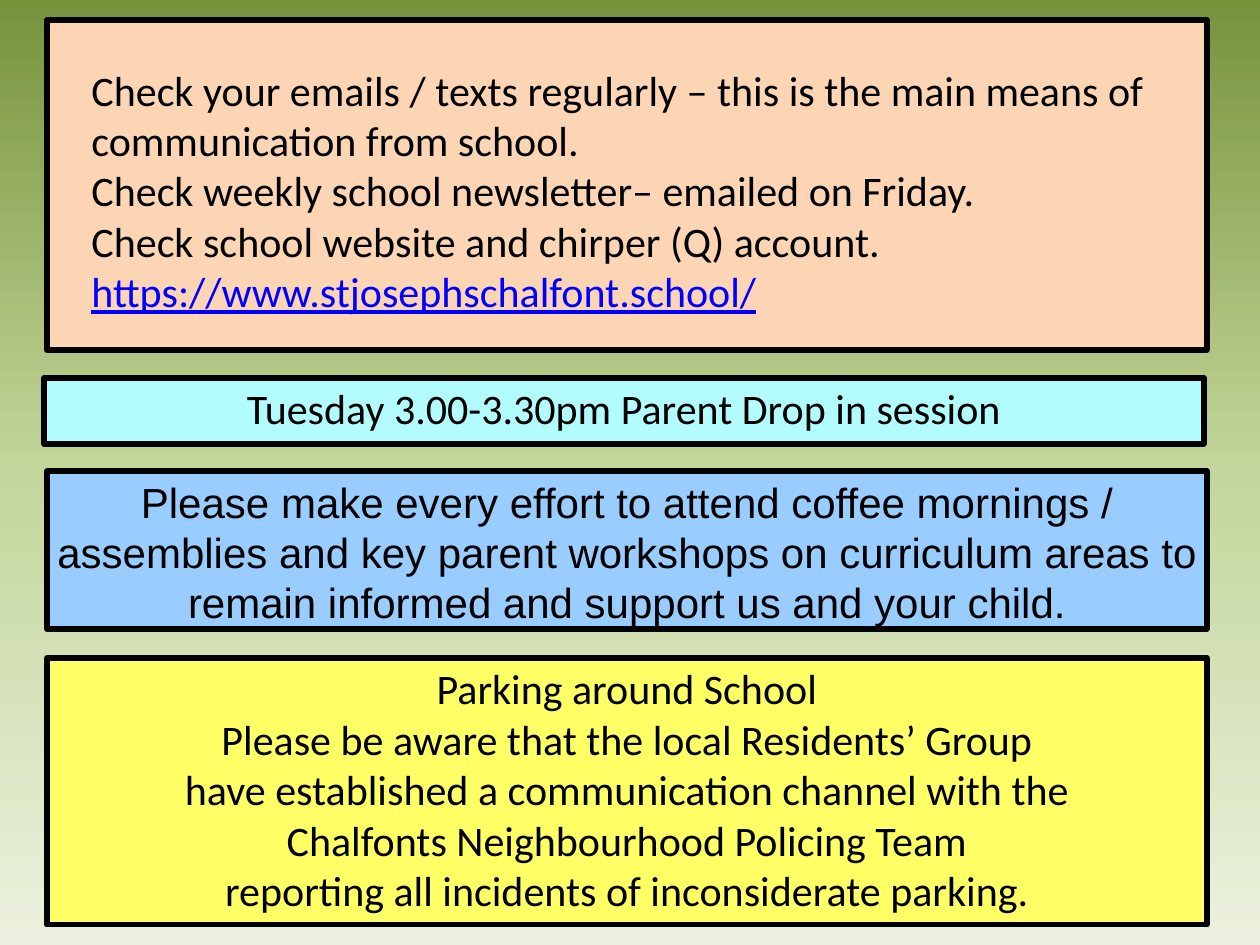
from copy import deepcopy
from dataclasses import dataclass

from pptx import Presentation
from pptx.dml.color import RGBColor
from pptx.enum.shapes import MSO_SHAPE as Preset
from pptx.enum.text import MSO_ANCHOR as Anchor, PP_ALIGN as Align
from pptx.oxml.ns import qn
from pptx.util import Emu, Pt

PX_PER_INCH = 126
BLACK = "000000"
LINK_BLUE = "0000FF"
BACKGROUND_STOPS = [(0, "77933C"), (0.5, "C3D69B"), (1, "EBF1DE")]
BOX_WIDTH = 1160
BOX_INSET = 5


@dataclass(frozen=True)
class NoticeBox:
    left: int
    top: int
    height: int
    fill: str
    lines: tuple[str, ...] = ()
    font: str = "Calibri"


NOTICE_BOXES = [
    NoticeBox(47, 658, 267, "FFFF66", (
        "Parking around School",
        "Please be aware that the local Residents’ Group",
        "have established a communication channel with the",
        "Chalfonts Neighbourhood Policing Team",
        "reporting all incidents of inconsiderate parking.",
    )),
    NoticeBox(47, 20, 330, "FCD5B5"),
    NoticeBox(44, 378, 66, "B2FCFE", (
        "Tuesday 3.00-3.30pm Parent Drop in session",
    )),
    NoticeBox(47, 471, 158, "99CCFF", (
        "Please make every effort to attend coffee mornings / assemblies and key "
        "parent workshops on curriculum areas to remain informed and support us "
        "and your child.",
    ), "Arial"),
]
COMMUNICATION_LINES = (
    "Check your emails / texts regularly – this is the main means of "
    "communication from school.",
    "Check weekly school newsletter– emailed on Friday.",
    "Check school website and chirper (Q) account.",
    "https://www.stjosephschalfont.school/",
)


def px(length: int) -> Emu:
    return Emu(round(length * 914400 / PX_PER_INCH))


def color(hex_string: str) -> RGBColor:
    return RGBColor.from_string(hex_string)


def fill_background(slide) -> None:
    fill = slide.background.fill
    fill.gradient()
    fill.gradient_angle = 270
    stop_list = slide.element.find(".//" + qn("a:gsLst"))
    while len(stop_list) < len(BACKGROUND_STOPS):
        stop_list.append(deepcopy(stop_list[0]))
    for stop, (position, hex_string) in zip(fill.gradient_stops, BACKGROUND_STOPS):
        stop.position = position
        stop.color.rgb = color(hex_string)


def write_lines(text_frame, lines: tuple[str, ...], font: str, alignment: Align) -> None:
    text_frame.word_wrap = True
    text_frame.vertical_anchor = Anchor.TOP
    text_frame.text = "\n".join(lines)
    for paragraph in text_frame.paragraphs:
        paragraph.alignment = alignment
        for run in paragraph.runs:
            run.font.name = font
            run.font.size = Pt(24)
            run.font.color.rgb = color(BLACK)


def draw_notice_box(slide, box: NoticeBox) -> None:
    shape = slide.shapes.add_shape(
        Preset.RECTANGLE, px(box.left), px(box.top), px(BOX_WIDTH), px(box.height)
    )
    shape.shadow.inherit = False
    shape.fill.solid()
    shape.fill.fore_color.rgb = color(box.fill)
    shape.line.color.rgb = color(BLACK)
    shape.line.width = Pt(3)
    if box.lines:
        text_frame = shape.text_frame
        text_frame.margin_left = text_frame.margin_right = px(BOX_INSET)
        text_frame.margin_top = text_frame.margin_bottom = px(BOX_INSET)
        write_lines(text_frame, box.lines, box.font, Align.CENTER)


def draw_communication_text(slide) -> None:
    text_box = slide.shapes.add_textbox(px(79), px(58), px(1101), px(267))
    text_frame = text_box.text_frame
    write_lines(text_frame, COMMUNICATION_LINES, "Calibri", Align.LEFT)
    address_font = text_frame.paragraphs[-1].runs[0].font
    address_font.color.rgb = color(LINK_BLUE)
    address_font.underline = True


def main() -> None:
    presentation = Presentation()
    presentation.slide_width = px(1260)
    presentation.slide_height = px(945)
    slide = presentation.slides.add_slide(presentation.slide_layouts[6])
    fill_background(slide)
    for box in NOTICE_BOXES:
        draw_notice_box(slide, box)
    draw_communication_text(slide)
    presentation.save("out.pptx")


if __name__ == "__main__":
    main()
